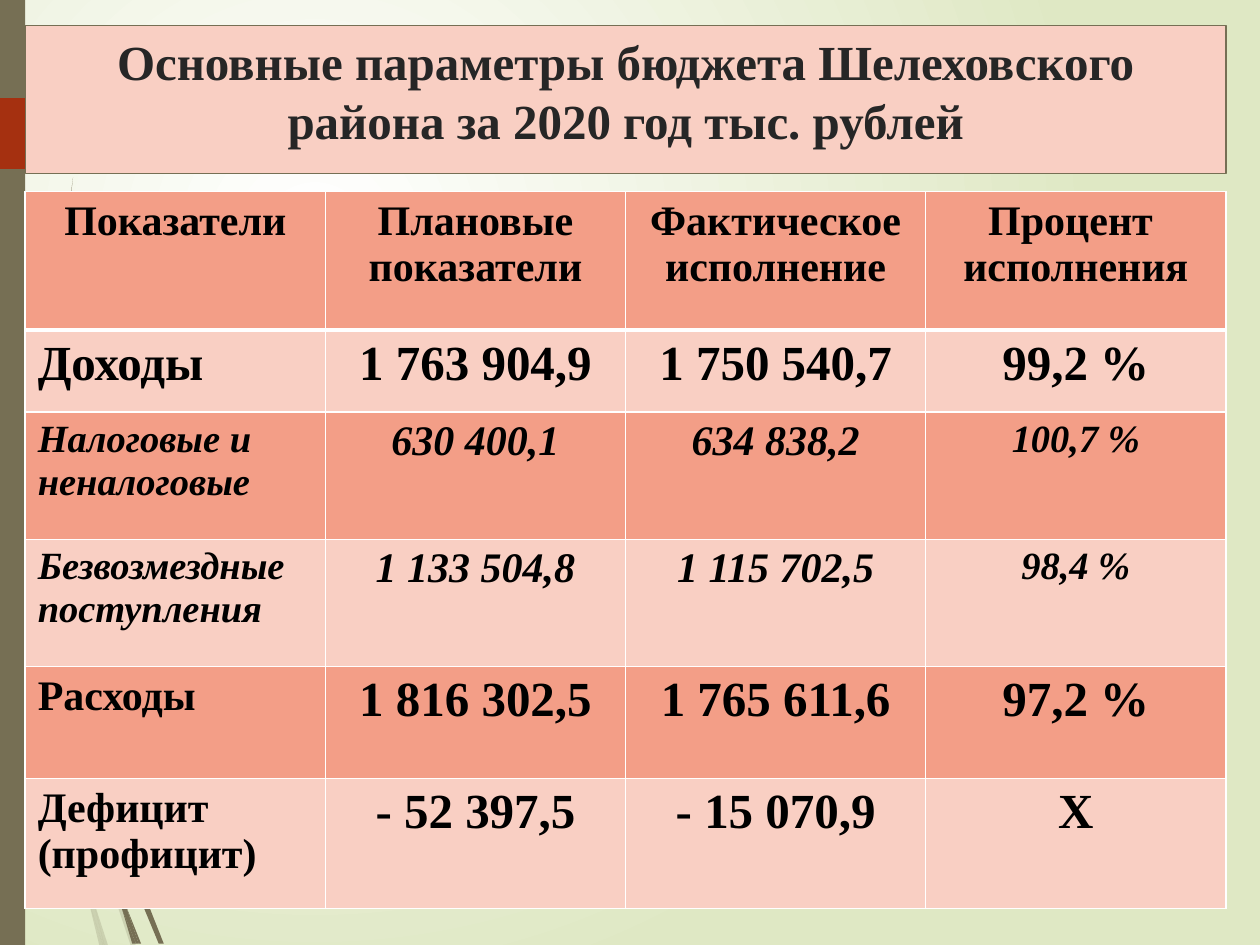
import pptx
import pptx.util
import pptx.dml.color
import pptx.enum.shapes
import pptx.enum.text
import lxml.etree

Inches = pptx.util.Inches
RGBColor = pptx.dml.color.RGBColor
Align = pptx.enum.text.PP_ALIGN
Shape = pptx.enum.shapes.MSO_SHAPE

FONT = "Times New Roman"
WHITE = RGBColor(0xFF, 0xFF, 0xFF)
GREEN = RGBColor(0xDF, 0xE8, 0xC4)
OLIVE = RGBColor(0x76, 0x6F, 0x54)
RUST = RGBColor(0xA5, 0x30, 0x10)
PINK = RGBColor(0xF9, 0xCF, 0xC3)
CORAL = RGBColor(0xF3, 0x9E, 0x87)
DARK = RGBColor(0x26, 0x26, 0x26)
BLACK = RGBColor(0, 0, 0)

TITLE = "Основные параметры бюджета Шелеховского района за 2020 год тыс. рублей"
ROWS = [
    ("Показатели", "Плановые показатели", "Фактическое\nисполнение", "Процент \nисполнения"),
    ("Доходы", "1 763 904,9", "1 750 540,7", "99,2 %"),
    ("Налоговые и неналоговые", "630 400,1", "634 838,2", "100,7 %"),
    ("Безвозмездные\nпоступления", "1 133 504,8", "1 115 702,5", "98,4 %"),
    ("Расходы", "1 816 302,5", "1 765 611,6", "97,2 %"),
    ("Дефицит\n(профицит)", "- 52 397,5", "- 15 070,9", "Х"),
]
HEIGHTS = [1.1, 0.65, 1.01, 1.01, 0.89, 1.03]
SIZES = [(24, 24), (28, 28), (22, 24), (22, 24), (24, 28), (24, 28)]
ITALIC = (2, 3)

PALE = [
    [(0, 2.82), (0.06, 3.22), (0.08, 3.5), (0.07, 3.44), (0, 2.99)],
    [(0.1, 3.45), (0.43, 5.2), (0.59, 5.86), (0.59, 5.99), (0.4, 5.22), (0.12, 3.76)],
    [(0.61, 5.96), (0.64, 6.07), (0.88, 6.92), (1.08, 7.51), (1.04, 7.51),
     (0.85, 6.94), (0.61, 6.1)],
    [(0.73, 7.11), (0.86, 7.51), (0.83, 7.51)],
    [(0.08, 3.5), (0.12, 3.76), (0.22, 4.69), (0.48, 6.19), (0.64, 6.83),
     (0.7, 7.14), (0.64, 6.93), (0.45, 6.21), (0.19, 4.7)],
    [(0.58, 5.99), (0.61, 6.08), (0.63, 6.46), (0.73, 7.11), (0.64, 6.83), (0.6, 6.46)],
    [(0.59, 5.86), (0.75, 4.61), (1.1, 3.48), (1.58, 2.44), (1.86, 1.97), (2.17, 1.53),
     (1.87, 1.98), (1.59, 2.45), (1.11, 3.49), (0.76, 4.62), (0.61, 5.96)],
    [(0.7, 7.14), (0.82, 7.51), (0.79, 7.51)],
    [(0.59, 5.86), (0.61, 5.96), (0.61, 6.1), (0.58, 5.99)],
    [(0.65, 6.83), (0.73, 7.11), (0.83, 7.51), (0.82, 7.51), (0.7, 7.14)],
]
SOLID = [
    [(0.02, 0), (0.03, 0), (0.06, 1.09), (0.15, 2.32), (0.3, 3.55), (0.45, 4.53),
     (0.47, 4.81), (0.27, 3.55), (0.14, 2.33), (0.05, 1.1)],
    [(0.5, 4.72), (0.77, 5.9), (0.88, 6.31), (0.88, 6.45), (0.73, 5.92), (0.53, 5.05)],
    [(0.91, 6.41), (0.94, 6.49), (1.13, 7.06), (1.3, 7.49), (1.26, 7.49),
     (1.09, 7.08), (0.91, 6.56)],
    [(0.47, 4.77), (0.53, 5.05), (0.6, 5.56), (0.81, 6.57), (0.91, 6.91),
     (0.97, 7.22), (0.92, 7.08), (0.77, 6.59), (0.56, 5.57)],
    [(0.58, 1.41), (0.52, 1.93), (0.48, 2.45), (0.44, 3.49), (0.48, 4.53),
     (0.5, 4.72), (0.45, 4.49), (0.42, 3.49), (0.47, 2.45), (0.51, 1.93)],
    [(1, 7.19), (1.12, 7.49), (1.1, 7.49)],
    [(0.45, 4.49), (0.5, 4.72), (0.52, 5.05), (0.47, 4.77)],
    [(0.88, 6.31), (1.01, 5.51), (1.29, 4.74), (1.68, 4.05), (2.16, 3.44),
     (1.69, 4.06), (1.31, 4.76), (1.03, 5.52), (0.91, 6.41)],
    [(0.97, 7.22), (1.08, 7.49), (1.05, 7.49)],
    [(0.88, 6.45), (0.91, 6.56), (1, 7.19), (0.91, 6.91)],
    [(0.88, 6.31), (0.91, 6.41), (0.91, 6.56), (0.88, 6.45)],
    [(0.91, 6.91), (1, 7.19), (1.1, 7.49), (1.08, 7.49), (0.97, 7.22)],
]


def add(node, tag, **attrs):
    """Append a drawing element to a node."""
    name = pptx.oxml.ns.qn("a:" + tag)
    return lxml.etree.SubElement(node, name, attrs)


def paint(slide):
    """Fill the background with a round gradient."""
    fill = slide.background.fill
    fill.gradient()
    for stop, color in zip(fill.gradient_stops, (WHITE, GREEN)):
        stop.color.rgb = color
    grad = slide.background._cSld.find(".//" + pptx.oxml.ns.qn("a:gradFill"))
    grad.remove(grad.find(pptx.oxml.ns.qn("a:lin")))
    ring = add(grad, "path", path="circle")
    add(ring, "fillToRect", l="50000", t="50000", r="100000", b="100000")


def coat(shape, color):
    """Give a shape a plain fill without line or shadow."""
    shape.shadow.inherit = False
    shape.fill.solid()
    shape.fill.fore_color.rgb = color
    shape.line.fill.background()


def add_wisp(slide, points, alpha=None):
    """Draw one grass blade through the given points."""
    spots = [(Inches(x), Inches(y)) for x, y in points]
    pen = slide.shapes.build_freeform(*spots[0])
    pen.add_line_segments(spots[1:], close=True)
    wisp = pen.convert_to_shape()
    coat(wisp, OLIVE)
    if alpha:
        tint = wisp._element.spPr.find(".//" + pptx.oxml.ns.qn("a:srgbClr"))
        add(tint, "alpha", val=str(alpha * 1000))


def add_block(slide, kind, left, top, width, height, color):
    """Add a plain filled preset shape."""
    box = map(Inches, (left, top, width, height))
    coat(slide.shapes.add_shape(kind, *box), color)


def style(frame, size, color, align, italic=False):
    """Format every paragraph of a text frame."""
    for para in frame.paragraphs:
        para.alignment = align
        for run in para.runs:
            font = run.font
            font.name, font.size = FONT, pptx.util.Pt(size)
            font.bold, font.italic = True, italic
            font.color.rgb = color


def set_title(slide):
    """Place the title over the decoration."""
    title = slide.shapes.title
    title.left, title.top = Inches(0.2), Inches(0.2)
    title.width, title.height = Inches(9.53), Inches(1.18)
    title.fill.solid()
    title.fill.fore_color.rgb = PINK
    title.line.color.rgb = OLIVE
    title.line.width = pptx.util.Pt(0.75)
    frame = title.text_frame
    frame.text = TITLE
    frame.word_wrap = True
    frame.auto_size = pptx.enum.text.MSO_AUTO_SIZE.NONE
    frame.vertical_anchor = pptx.enum.text.MSO_ANCHOR.TOP
    style(frame, 28, DARK, Align.CENTER)
    slide.shapes._spTree.append(title._element)


def edge(cell, side, width):
    """Draw a white border on one side of a cell."""
    line = add(cell._tc.get_or_add_tcPr(), side, w=str(pptx.util.Pt(width)))
    add(add(line, "solidFill"), "srgbClr", val=str(WHITE))


def add_budget(slide):
    """Add the budget table with alternating row fills."""
    box = map(Inches, (0.2, 1.52, 9.53, sum(HEIGHTS)))
    table = slide.shapes.add_table(len(ROWS), len(ROWS[0]), *box).table
    for i, (texts, sizes) in enumerate(zip(ROWS, SIZES)):
        table.rows[i].height = Inches(HEIGHTS[i])
        for j, text in enumerate(texts):
            cell = table.cell(i, j)
            for side in ("lnL", "lnR", "lnT", "lnB"):
                thick = (i, side) in ((0, "lnB"), (1, "lnT"))
                edge(cell, side, 3 if thick else 1)
            cell.fill.solid()
            cell.fill.fore_color.rgb = PINK if i % 2 else CORAL
            cell.text_frame.text = text
            align = Align.LEFT if i and not j else Align.CENTER
            size = 22 if i in ITALIC and j == 3 else sizes[j > 0]
            style(cell.text_frame, size, BLACK, align, i in ITALIC)


def main():
    """Build and save the slide."""
    deck = pptx.Presentation()
    deck.slide_width, deck.slide_height = Inches(10), Inches(7.5)
    slide = deck.slides.add_slide(deck.slide_layouts[5])
    paint(slide)
    for points in PALE:
        add_wisp(slide, points, 20)
    for points in SOLID:
        add_wisp(slide, points)
    add_block(slide, Shape.RECTANGLE, 0, 0, 0.2, 7.5, OLIVE)
    add_block(slide, Shape.PENTAGON, 0, 0.78, 1.49, 0.56, RUST)
    set_title(slide)
    add_budget(slide)
    deck.save("out.pptx")


if __name__ == "__main__":
    main()
